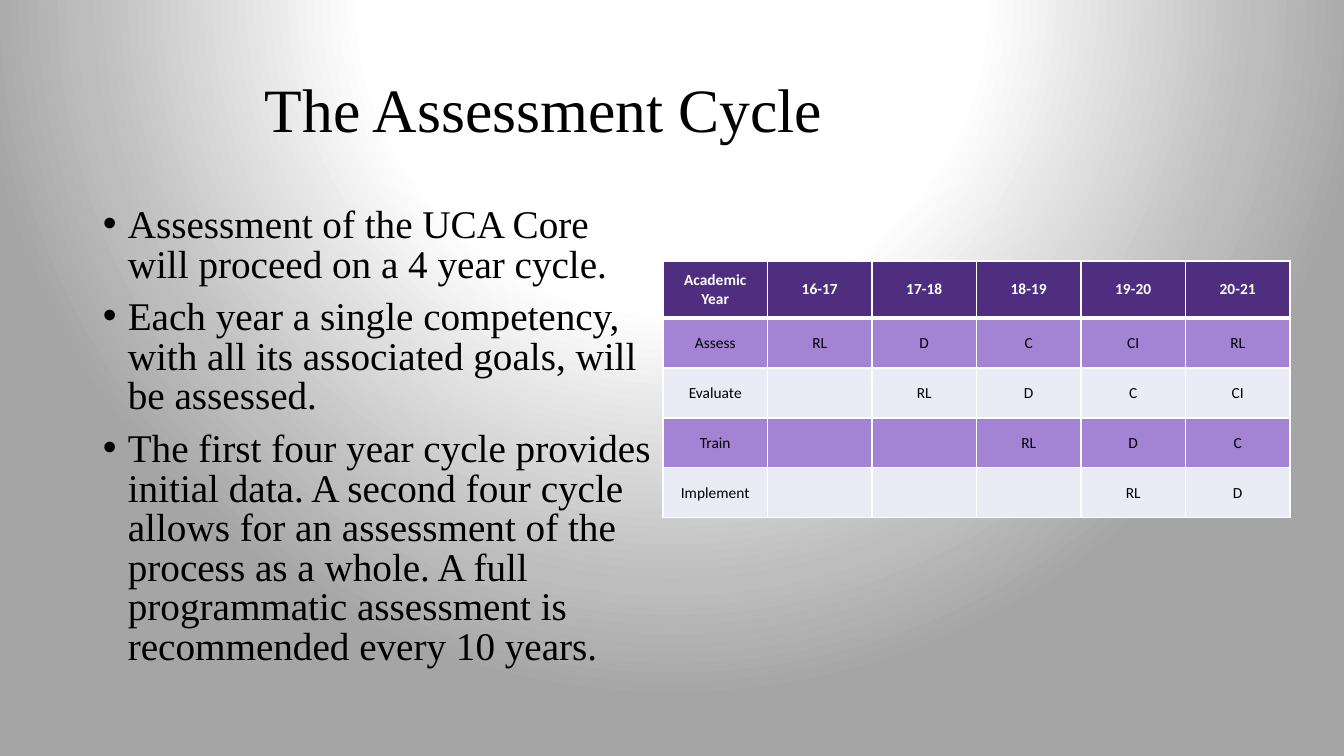
from dataclasses import dataclass
from typing import Any

from lxml.etree import SubElement
from pptx import Presentation
from pptx.dml.color import RGBColor
from pptx.enum.text import MSO_ANCHOR, PP_ALIGN
from pptx.oxml import parse_xml
from pptx.oxml.ns import nsdecls, qn
from pptx.util import Pt

SCALE = 12192000 / 1344
BLACK = RGBColor(0x00, 0x00, 0x00)
WHITE = RGBColor(0xFF, 0xFF, 0xFF)
SILVER = RGBColor(0xBD, 0xBD, 0xBD)
GRAY = RGBColor(0xA5, 0xA5, 0xA5)
PURPLE = RGBColor(0x4F, 0x2D, 0x7F)
LILAC = RGBColor(0xA3, 0x83, 0xD3)
PALE = RGBColor(0xE9, 0xEB, 0xF5)

STOPS = [(0, WHITE), (40, WHITE), (76, SILVER), (91, GRAY)]
ROWS = [
    ["Academic Year", "16-17", "17-18", "18-19", "19-20", "20-21"],
    ["Assess", "RL", "D", "C", "CI", "RL"],
    ["Evaluate", "", "RL", "D", "C", "CI"],
    ["Train", "", "", "RL", "D", "C"],
    ["Implement", "", "", "", "RL", "D"],
]
HEAD = 57
ROW = 50


@dataclass
class Block:
    box: tuple[int, int, int, int]
    lines: list[str]
    size: int
    pitch: float
    gap: float = 0
    dent: int = 0
    anchor: Any = MSO_ANCHOR.TOP


BLOCKS = [
    Block((255, 40, 996, 146), ["The Assessment Cycle"], 44, 0.9,
          anchor=MSO_ANCHOR.MIDDLE),
    Block((93, 202, 571, 480), [
        "Assessment of the UCA Core will proceed on a 4 year cycle.",
        "Each year a single competency, with all its associated goals, "
        "will be assessed.",
        "The first four year cycle provides initial data. A second four cycle "
        "allows for an assessment of the process as a whole. A full "
        "programmatic assessment is recommended every 10 years.",
    ], 28, 0.84, 9.5, 25),
]


def px(size: int) -> int:
    return round(size * SCALE)


def apply(item: Any, form: dict[str, Any]) -> None:
    for key, value in form.items():
        setattr(item, key, value)


def write(para: Any, text: str, color: RGBColor, form: dict[str, Any]) -> None:
    run = para.add_run()
    run.text = text
    apply(run.font, form)
    run.font.color.rgb = color


def paint(slide: Any) -> None:
    slide.background.fill.solid()
    solid = slide.element.find(".//" + qn("a:solidFill"))
    stops = "".join(
        f'<a:gs pos="{place * 1000}"><a:srgbClr val="{color}"/></a:gs>'
        for place, color in STOPS)
    blend = parse_xml(
        f'<a:gradFill {nsdecls("a")} rotWithShape="1"><a:gsLst>{stops}</a:gsLst>'
        '<a:path path="circle">'
        '<a:fillToRect l="50000" t="-80000" r="50000" b="180000"/>'
        '</a:path></a:gradFill>')
    solid.getparent().replace(solid, blend)


def draw_block(slide: Any, block: Block) -> None:
    frame = slide.shapes.add_textbox(*map(px, block.box)).text_frame
    apply(frame, {"word_wrap": True, "vertical_anchor": block.anchor})
    for spot, line in enumerate(block.lines):
        para = frame.add_paragraph() if spot else frame.paragraphs[0]
        apply(para, {"line_spacing": block.pitch,
                     "space_before": Pt(block.gap if spot else 0)})
        if block.dent:
            props = para._p.get_or_add_pPr()
            props.set("marL", str(px(block.dent)))
            props.set("indent", str(-px(block.dent)))
            SubElement(props, qn("a:buFont"), typeface="Arial")
            SubElement(props, qn("a:buChar"), char="•")
        write(para, line, BLACK,
              {"name": "Times New Roman", "size": Pt(block.size)})


def edge(cell: Any, side: str, width: int) -> None:
    line = SubElement(cell._tc.get_or_add_tcPr(), qn(f"a:ln{side}"),
                      w=str(Pt(width)))
    fill = SubElement(line, qn("a:solidFill"))
    SubElement(fill, qn("a:srgbClr"), val=str(WHITE))


def draw_cell(cell: Any, text: str, row: int) -> None:
    for side in "LRTB":
        thick = (row == 0 and side == "B") or (row == 1 and side == "T")
        edge(cell, side, 3 if thick else 1)
    cell.fill.solid()
    cell.fill.fore_color.rgb = (LILAC if row % 2 else PALE) if row else PURPLE
    cell.vertical_anchor = MSO_ANCHOR.MIDDLE
    if text:
        para = cell.text_frame.paragraphs[0]
        para.alignment = PP_ALIGN.CENTER
        write(para, text, BLACK if row else WHITE,
              {"name": "Calibri", "size": Pt(11), "bold": row == 0})


def draw_table(slide: Any) -> None:
    high = HEAD + ROW * (len(ROWS) - 1)
    table = slide.shapes.add_table(
        len(ROWS), len(ROWS[0]), px(663), px(261), px(627), px(high)).table
    for row, texts in enumerate(ROWS):
        table.rows[row].height = px(ROW if row else HEAD)
        for col, text in enumerate(texts):
            draw_cell(table.cell(row, col), text, row)


def main() -> None:
    deck = Presentation()
    apply(deck, {"slide_width": px(1344), "slide_height": px(756)})
    slide = deck.slides.add_slide(deck.slide_layouts[6])
    paint(slide)
    for block in BLOCKS:
        draw_block(slide, block)
    draw_table(slide)
    deck.save("out.pptx")


if __name__ == "__main__":
    main()
